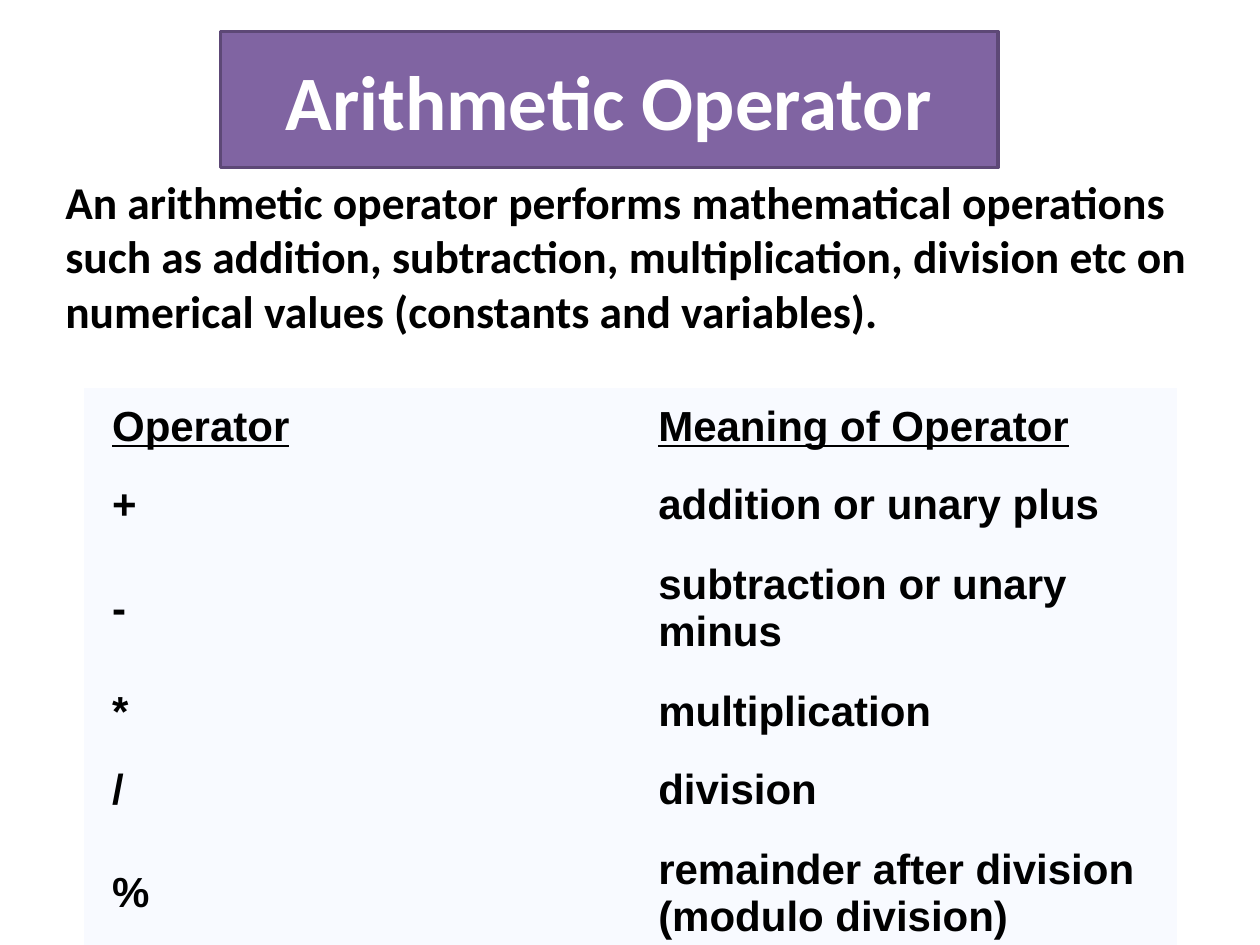
from pptx import Presentation
from pptx.dml.color import RGBColor
from pptx.enum.shapes import MSO_SHAPE
from pptx.enum.text import MSO_ANCHOR, PP_ALIGN
from pptx.oxml.ns import qn
from pptx.util import Inches, Pt

# Content
TITLE = "Arithmetic Operator"
DEFINITION = (
    "An arithmetic operator performs mathematical operations such as addition, "
    "subtraction, multiplication, division etc on numerical values "
    "(constants and variables)."
)
OPERATORS = [
    ("Operator", "Meaning of Operator"),
    ("+", "addition or unary plus"),
    ("-", "subtraction or unary minus"),
    ("*", "multiplication"),
    ("/", "division"),
    ("%", "remainder after division (modulo division)"),
]

# Look
PURPLE = RGBColor(0x80, 0x64, 0xA2)
DARK_PURPLE = RGBColor(0x5D, 0x48, 0x76)
PALE_BLUE = RGBColor(0xF8, 0xFA, 0xFF)
WHITE = RGBColor(0xFF, 0xFF, 0xFF)
BLACK = RGBColor(0, 0, 0)
PLAIN_TABLE_STYLE = "{2D5ABB26-0587-4C30-8999-92F81FD0307C}"

# Grid, in inches
ROW_HEIGHT, LAST_ROW_HEIGHT = 0.62, 0.96
TABLE_WIDTH = 8.67
TABLE_HEIGHT = ROW_HEIGHT * (len(OPERATORS) - 1) + LAST_ROW_HEIGHT


def box(left, top, width, height):
    return [Inches(v) for v in (left, top, width, height)]


def write(frame, text, size, font, color=BLACK, underline=False):
    run = frame.paragraphs[0].add_run()
    run.text = text
    run.font.size = Pt(size)
    run.font.name = font
    run.font.bold = True
    run.font.underline = underline
    run.font.color.rgb = color


prs = Presentation()
prs.slide_width, prs.slide_height = Inches(10), Inches(7.5)
slide = prs.slides.add_slide(prs.slide_layouts[6])

# Title banner
banner = slide.shapes.add_shape(MSO_SHAPE.RECTANGLE, *box(1.75, 0.25, 6.17, 1.08))
banner.shadow.inherit = False
banner.fill.solid()
banner.fill.fore_color.rgb = PURPLE
banner.line.color.rgb = DARK_PURPLE
banner.line.width = Pt(2)
banner.text_frame.vertical_anchor = MSO_ANCHOR.MIDDLE
banner.text_frame.paragraphs[0].alignment = PP_ALIGN.CENTER
write(banner.text_frame, TITLE, 44, "Calibri", WHITE)

# Definition
definition = slide.shapes.add_textbox(*box(0.42, 1.33, 9.17, 1.41)).text_frame
definition.word_wrap = True
write(definition, DEFINITION, 26, "Calibri")

# Operator table
table = slide.shapes.add_table(
    len(OPERATORS), 2, *box(0.67, 3.08, TABLE_WIDTH, TABLE_HEIGHT)
).table
table.first_row = table.horz_banding = False
table._tbl.tblPr.find(qn("a:tableStyleId")).text = PLAIN_TABLE_STYLE

for row, entries in enumerate(OPERATORS):
    is_last = row == len(OPERATORS) - 1
    table.rows[row].height = Inches(LAST_ROW_HEIGHT if is_last else ROW_HEIGHT)
    for col, entry in enumerate(entries):
        cell = table.cell(row, col)
        cell.fill.solid()
        cell.fill.fore_color.rgb = PALE_BLUE
        cell.vertical_anchor = MSO_ANCHOR.MIDDLE
        cell.margin_left = cell.margin_right = Inches(0.22)
        cell.margin_top = cell.margin_bottom = Inches(0.11)
        write(cell.text_frame, entry, 24, "Arial", underline=row == 0)

prs.save("out.pptx")
